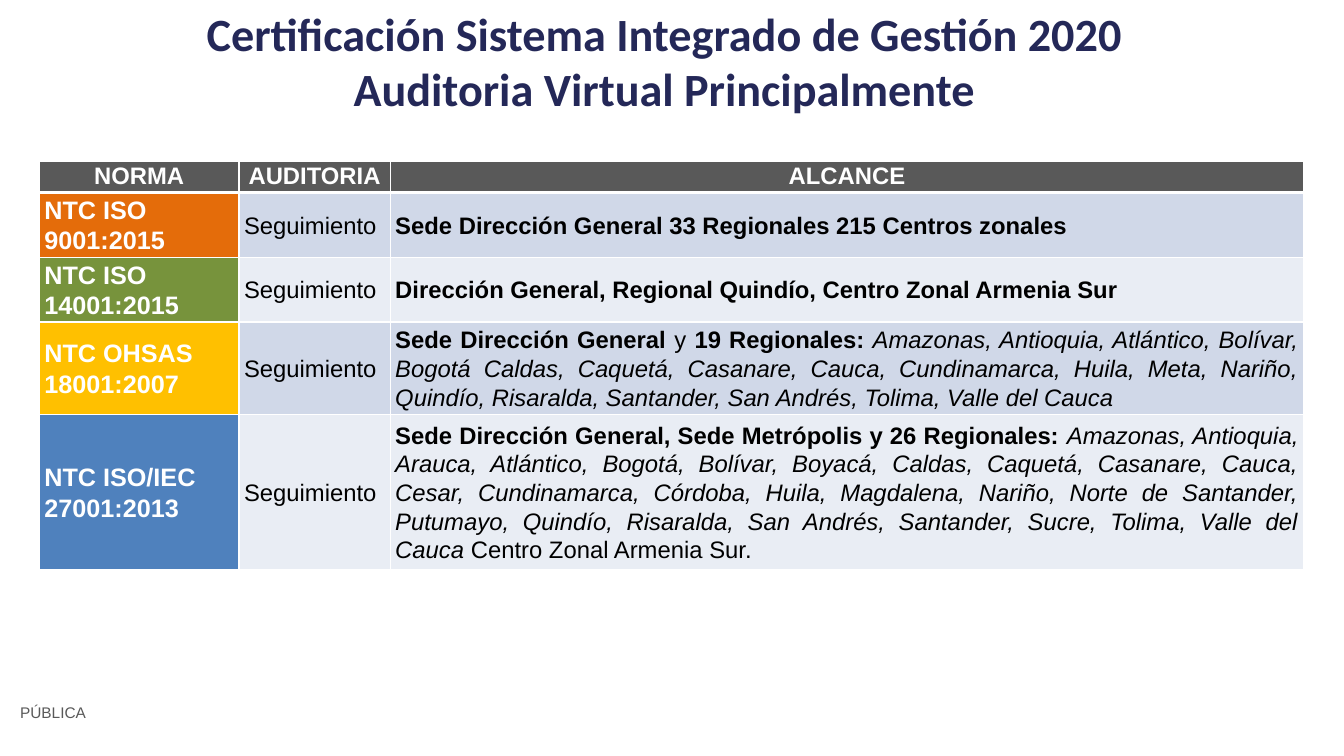
from lxml.etree import SubElement as Sub
from pptx import Presentation as Deck
from pptx.dml.color import RGBColor as Rgb
from pptx.enum.text import MSO_ANCHOR as Anchor, MSO_AUTO_SIZE as Auto, PP_ALIGN as Align
from pptx.oxml.ns import qn
from pptx.util import Pt

PX = 9144
WHITE, BLACK, GREY, NAVY = "FFFFFF", "000000", "595959", "242858"
BANDS = ["D0D8E8", "E9EDF4"]
COLS = [198, 150, 906]
ROWS = [31, 64, 64, 92, 154]
HEADS = ["NORMA", "AUDITORIA", "ALCANCE"]
NORMS = [
    ("NTC ISO 9001:2015", "E46C0A", [
        ("Sede Dirección General 33 Regionales 215 Centros zonales", "b")]),
    ("NTC ISO 14001:2015", "77933C", [
        ("Dirección General, Regional Quindío, Centro Zonal Armenia Sur", "b")]),
    ("NTC OHSAS 18001:2007", "FFC000", [
        ("Sede Dirección General ", "b"),
        ("y ", ""),
        ("19 Regionales: ", "b"),
        ("Amazonas, Antioquia, Atlántico, Bolívar, Bogotá Caldas, Caquetá, "
         "Casanare, Cauca, Cundinamarca, Huila, Meta, Nariño, Quindío, "
         "Risaralda, Santander, San Andrés, Tolima, Valle del Cauca", "i")]),
    ("NTC ISO/IEC 27001:2013", "4F81BD", [
        ("Sede Dirección General, Sede Metrópolis y 26 Regionales: ", "b"),
        ("Amazonas, Antioquia, Arauca, Atlántico, Bogotá, Bolívar, Boyacá, "
         "Caldas, Caquetá, Casanare, Cauca, Cesar, Cundinamarca, Córdoba, "
         "Huila, Magdalena, Nariño, Norte de Santander, Putumayo, Quindío, "
         "Risaralda, San Andrés, Santander, Sucre, Tolima, Valle del Cauca ", "i"),
        ("Centro Zonal Armenia Sur.", "")]),
]


def tint(code):
    return Rgb.from_string(code)


class Page:
    def __init__(self, deck, face):
        self.slide = deck.slides.add_slide(deck.slide_layouts[6])
        self.face = face

    def style(self, run, size, color, mode="", face=None):
        font = run.font
        font.name, font.size = face or self.face, Pt(size)
        font.bold, font.italic = "b" in mode, "i" in mode
        font.color.rgb = tint(color)

    def text(self, box, words, size, color, mode="", face=None, align=Align.LEFT):
        shape = self.slide.shapes.add_textbox(*[n * PX for n in box])
        frame = shape.text_frame
        frame.word_wrap, frame.auto_size = True, Auto.SHAPE_TO_FIT_TEXT
        frame.text = words
        for para in frame.paragraphs:
            para.alignment = align
            self.style(para.runs[0], size, color, mode, face)

    def table(self, left, top, cols, rows):
        box = [n * PX for n in (left, top, sum(cols), sum(rows))]
        grid = self.slide.shapes.add_table(len(rows), len(cols), *box).table
        for col, wide in zip(grid.columns, cols):
            col.width = wide * PX
        for row, high in zip(grid.rows, rows):
            row.height = high * PX
        return grid

    def edge(self, cell, side, width):
        line = Sub(cell._tc.get_or_add_tcPr(), qn("a:ln" + side), w=str(Pt(width)))
        fill = Sub(line, qn("a:solidFill"))
        Sub(fill, qn("a:srgbClr"), val=WHITE)

    def cell(self, cell, parts, size, color, fill, align, anchor=Anchor.MIDDLE, top=1, base=1):
        for side, width in zip("LRTB", (1, 1, top, base)):
            self.edge(cell, side, width)
        cell.fill.solid()
        cell.fill.fore_color.rgb = tint(fill)
        cell.margin_left = cell.margin_right = 5 * PX
        cell.margin_top = cell.margin_bottom = 0
        cell.vertical_anchor = anchor
        para = cell.text_frame.paragraphs[0]
        para.alignment, para.line_spacing = align, 1.07
        for words, mode in parts:
            run = para.add_run()
            run.text = words
            self.style(run, size, color, mode)


def main():
    deck = Deck()
    deck.slide_width, deck.slide_height = 1333 * PX, 750 * PX
    page = Page(deck, "Arial")
    page.text((-15, 0, 1348, 177),
              "Certificación Sistema Integrado de Gestión 2020\nAuditoria Virtual Principalmente",
              33, NAVY, "b", "Calibri", Align.CENTER)
    page.text((10, 693, 119, 29), "PÚBLICA", 11, GREY)
    grid = page.table(39, 160, COLS, ROWS)
    for col, head in enumerate(HEADS):
        page.cell(grid.cell(0, col), [(head, "b")], 17, WHITE, GREY,
                  Align.CENTER, Anchor.TOP, base=3)
    for row, (norm, fill, scope) in enumerate(NORMS, 1):
        top = 3 if row == 1 else 1
        band = BANDS[(row - 1) % 2]
        page.cell(grid.cell(row, 0), [(norm, "b")], 18, WHITE, fill, Align.LEFT, top=top)
        for col, parts in enumerate([[("Seguimiento", "")], scope], 1):
            page.cell(grid.cell(row, col), parts, 17, BLACK, band, Align.JUSTIFY, top=top)
    deck.save("out.pptx")


if __name__ == "__main__":
    main()
